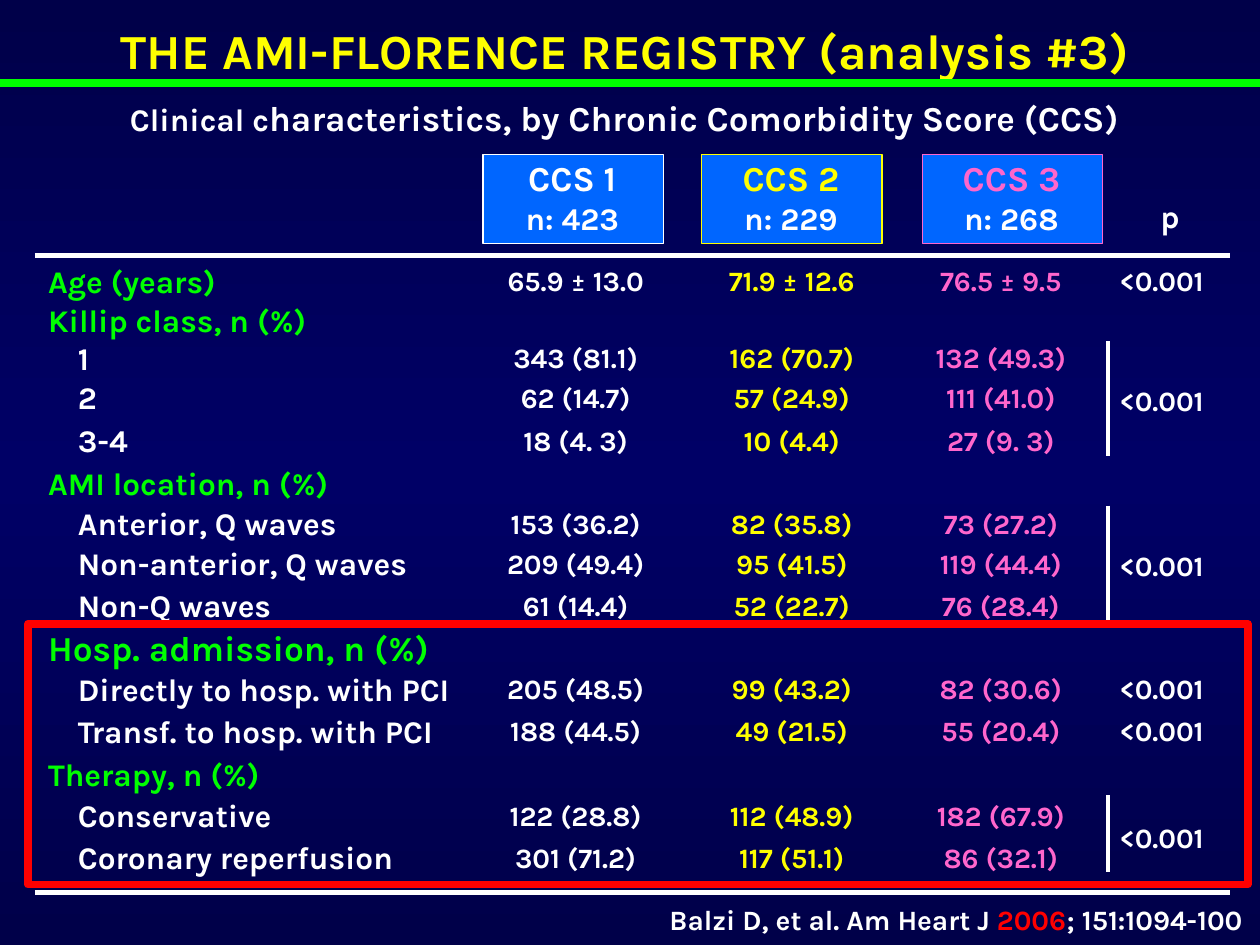
import copy
from dataclasses import dataclass

import pptx
import pptx.dml.color
import pptx.enum.shapes
import pptx.enum.text
import pptx.oxml.ns
import pptx.util
from lxml import etree

Pt = pptx.util.Pt
ALIGN = pptx.enum.text.PP_ALIGN
ANCHOR = pptx.enum.text.MSO_ANCHOR


@dataclass(frozen=True)
class Theme:
    font: str = "Karla"
    white: str = "FFFFFF"
    yellow: str = "FFFF00"
    pink: str = "FF66CC"
    green: str = "00FF00"
    red: str = "FF0000"
    card: str = "0066FF"
    edge: str = "000049"
    middle: str = "000066"
    title: int = 28
    heading: int = 20
    label: int = 18
    value: int = 16


THEME = Theme()
NO_GRID_STYLE = "{2D5ABB26-0587-4C30-8999-92F81FD0307C}"
GROUP_COLORS = (THEME.white, THEME.yellow, THEME.pink)
CARDS = [("CCS 1", "n: 423", 276), ("CCS 2", "n: 229", 401), ("CCS 3", "n: 268", 527)]
COLUMN_WIDTHS = (245.5, 118, 129, 110, 79)
P_VALUE = "<0.001"

ROWS = [
    (23, "Age (years)", ("65.9 ± 13.0", "71.9 ± 12.6", "76.5 ± 9.5")),
    (21, "Killip class, n (%)", None),
    (21, "1", ("343 (81.1)", "162 (70.7)", "132 (49.3)")),
    (24, "2", ("62 (14.7)", "57 (24.9)", "111 (41.0)")),
    (25, "3-4", ("18 (4. 3)", "10 (4.4)", "27 (9. 3)")),
    (24, "AMI location, n (%)", None),
    (22, "Anterior, Q waves", ("153 (36.2)", "82 (35.8)", "73 (27.2)")),
    (23.5, "Non-anterior, Q waves", ("209 (49.4)", "95 (41.5)", "119 (44.4)")),
    (24.5, "Non-Q waves", ("61 (14.4)", "52 (22.7)", "76 (28.4)")),
    (23.5, "Hosp. admission, n (%)", None),
    (23, "Directly to hosp. with PCI", ("205 (48.5)", "99 (43.2)", "82 (30.6)")),
    (25, "Transf. to hosp. with PCI", ("188 (44.5)", "49 (21.5)", "55 (20.4)")),
    (24, "Therapy, n (%)", None),
    (23.5, "Conservative", ("122 (28.8)", "112 (48.9)", "182 (67.9)")),
    (25, "Coronary reperfusion", ("301 (71.2)", "117 (51.1)", "86 (32.1)")),
]
P_SPANS = [(0, 0), (2, 4), (6, 8), (10, 10), (11, 11), (13, 14)]


def rgb(color):
    return pptx.dml.color.RGBColor.from_string(color)


def format_run(run, size, color):
    run.font.name = THEME.font
    run.font.size = Pt(size)
    run.font.bold = True
    run.font.color.rgb = rgb(color)


def write(paragraph, pieces, align, spacing=None, before=0):
    paragraph.alignment = align
    paragraph.line_spacing = spacing
    paragraph.space_before = Pt(before)
    for text, size, color in pieces:
        run = paragraph.add_run()
        run.text = text
        format_run(run, size, color)


def set_margins(frame, left, top, right, bottom):
    frame.margin_left, frame.margin_top = Pt(left), Pt(top)
    frame.margin_right, frame.margin_bottom = Pt(right), Pt(bottom)


def add_text(slide, box, pieces, align, spacing=None):
    frame = slide.shapes.add_textbox(*map(Pt, box)).text_frame
    frame.word_wrap = True
    set_margins(frame, 0, 0, 0, 0)
    write(frame.paragraphs[0], pieces, align, spacing)


def add_line(slide, start, end, color, width):
    line = slide.shapes.add_connector(
        pptx.enum.shapes.MSO_CONNECTOR.STRAIGHT, *map(Pt, start + end))
    line.line.color.rgb = rgb(color)
    line.line.width = Pt(width)
    etree.SubElement(line._element.spPr, pptx.oxml.ns.qn("a:effectLst"))


def add_rectangle(slide, box, line_color, line_width):
    shape = slide.shapes.add_shape(
        pptx.enum.shapes.MSO_SHAPE.RECTANGLE, *map(Pt, box))
    shape.shadow.inherit = False
    shape.line.color.rgb = rgb(line_color)
    shape.line.width = Pt(line_width)
    return shape


def paint_background(slide):
    fill = slide.background.fill
    fill.gradient()
    fill.gradient_angle = 90
    stop_list = slide._element.xpath(".//a:gsLst")[0]
    stop_list.append(copy.deepcopy(stop_list[0]))
    colors = (THEME.edge, THEME.middle, THEME.edge)
    for stop, position, color in zip(fill.gradient_stops, (0, 0.5, 1), colors):
        stop.position = position
        stop.color.rgb = rgb(color)


def place_title(slide, box):
    title = slide.shapes.title
    title.left, title.top, title.width, title.height = map(Pt, box)
    frame = title.text_frame
    frame.word_wrap = True
    frame.auto_size = pptx.enum.text.MSO_AUTO_SIZE.NONE
    frame.vertical_anchor = ANCHOR.MIDDLE
    write(frame.paragraphs[0],
          [("THE AMI-FLORENCE REGISTRY (analysis #3)", THEME.title, THEME.yellow)],
          ALIGN.CENTER, 1.4)
    write(frame.add_paragraph(),
          [("Clinical c", THEME.label, THEME.white),
           ("haracteristics, by Chronic Comorbidity Score (CCS)",
            THEME.heading, THEME.white)],
          ALIGN.CENTER, 1.4)


def add_card(slide, box, name, count, color):
    card = add_rectangle(slide, box, color, 0.75)
    card.fill.solid()
    card.fill.fore_color.rgb = rgb(THEME.card)
    frame = card.text_frame
    frame.vertical_anchor = ANCHOR.TOP
    set_margins(frame, 3, 3.6, 4, 3.6)
    write(frame.paragraphs[0], [(name, THEME.heading, color)], ALIGN.CENTER, 0.9)
    write(frame.add_paragraph(), [(count, THEME.label, THEME.white)],
          ALIGN.CENTER, 0.9, 2.7)


def fill_cell(cell, text, size, color, align, indent=0):
    set_margins(cell, indent, 0, 0, 0)
    cell.text_frame.text = text
    paragraph = cell.text_frame.paragraphs[0]
    paragraph.alignment = align
    for run in paragraph.runs:
        format_run(run, size, color)


def add_characteristics(slide, left, top):
    heights = [height for height, label, values in ROWS]
    frame = slide.shapes.add_table(len(ROWS), len(COLUMN_WIDTHS), Pt(left), Pt(top),
                                   Pt(sum(COLUMN_WIDTHS)), Pt(sum(heights)))
    table = frame.table
    table.first_row = table.horz_banding = False
    table._tbl.tblPr.find(pptx.oxml.ns.qn("a:tableStyleId")).text = NO_GRID_STYLE
    for column, width in zip(table.columns, COLUMN_WIDTHS):
        column.width = Pt(width)
    for cell in table.iter_cells():
        cell.fill.background()
        cell.vertical_anchor = ANCHOR.MIDDLE
        set_margins(cell, 0, 0, 0, 0)
        etree.SubElement(cell.text_frame.paragraphs[0]._p,
                         pptx.oxml.ns.qn("a:endParaRPr"), sz=str(THEME.value * 100))
    for index, (height, label, values) in enumerate(ROWS):
        table.rows[index].height = Pt(height)
        is_heading = values is None or index == 0
        size = THEME.heading if label.startswith("Hosp.") else THEME.label
        fill_cell(table.cell(index, 0), label, size,
                  THEME.green if is_heading else THEME.white,
                  ALIGN.LEFT, 3 if is_heading else 20)
        for column, (value, color) in enumerate(zip(values or (), GROUP_COLORS), 1):
            fill_cell(table.cell(index, column), value, THEME.value, color, ALIGN.CENTER)
    for first, last in P_SPANS:
        cell = table.cell(first, 4)
        if last > first:
            cell.merge(table.cell(last, 4))
            x = left + sum(COLUMN_WIDTHS[:4]) + 6
            add_line(slide, (x, top + sum(heights[:first]) + 1),
                     (x, top + sum(heights[:last + 1]) - 3.5), THEME.white, 2.25)
        fill_cell(cell, P_VALUE, THEME.value, THEME.white, ALIGN.LEFT, 13)


def add_citation(slide, box):
    pieces = [("Balzi D, et al. Am Heart J ", THEME.value, THEME.white),
              ("2006", THEME.value, THEME.red),
              ("; 151:1094-100", THEME.value, THEME.white)]
    add_text(slide, box, pieces, ALIGN.RIGHT, 1.2)


def build_registry_slide(presentation):
    slide = presentation.slides.add_slide(presentation.slide_layouts[5])
    paint_background(slide)
    place_title(slide, (1, 1, 712, 75.5))
    add_line(slide, (0, 47.5), (720, 47.5), THEME.green, 4.5)
    for (name, count, left), color in zip(CARDS, GROUP_COLORS):
        add_card(slide, (left, 88.5, 103, 50.5), name, count, color)
    add_text(slide, (640, 112.5, 57, 21), [("p", THEME.label, THEME.white)], ALIGN.CENTER)
    for y in (146, 510):
        add_line(slide, (20, y), (703, y), THEME.white, 3)
    add_characteristics(slide, 24.5, 150)
    add_citation(slide, (222, 512, 488, 23))
    add_rectangle(slide, (16, 356.5, 697, 149), THEME.red, 4.5).fill.background()


def main():
    presentation = pptx.Presentation()
    presentation.slide_width, presentation.slide_height = Pt(720), Pt(540)
    build_registry_slide(presentation)
    presentation.save("out.pptx")


if __name__ == "__main__":
    main()
